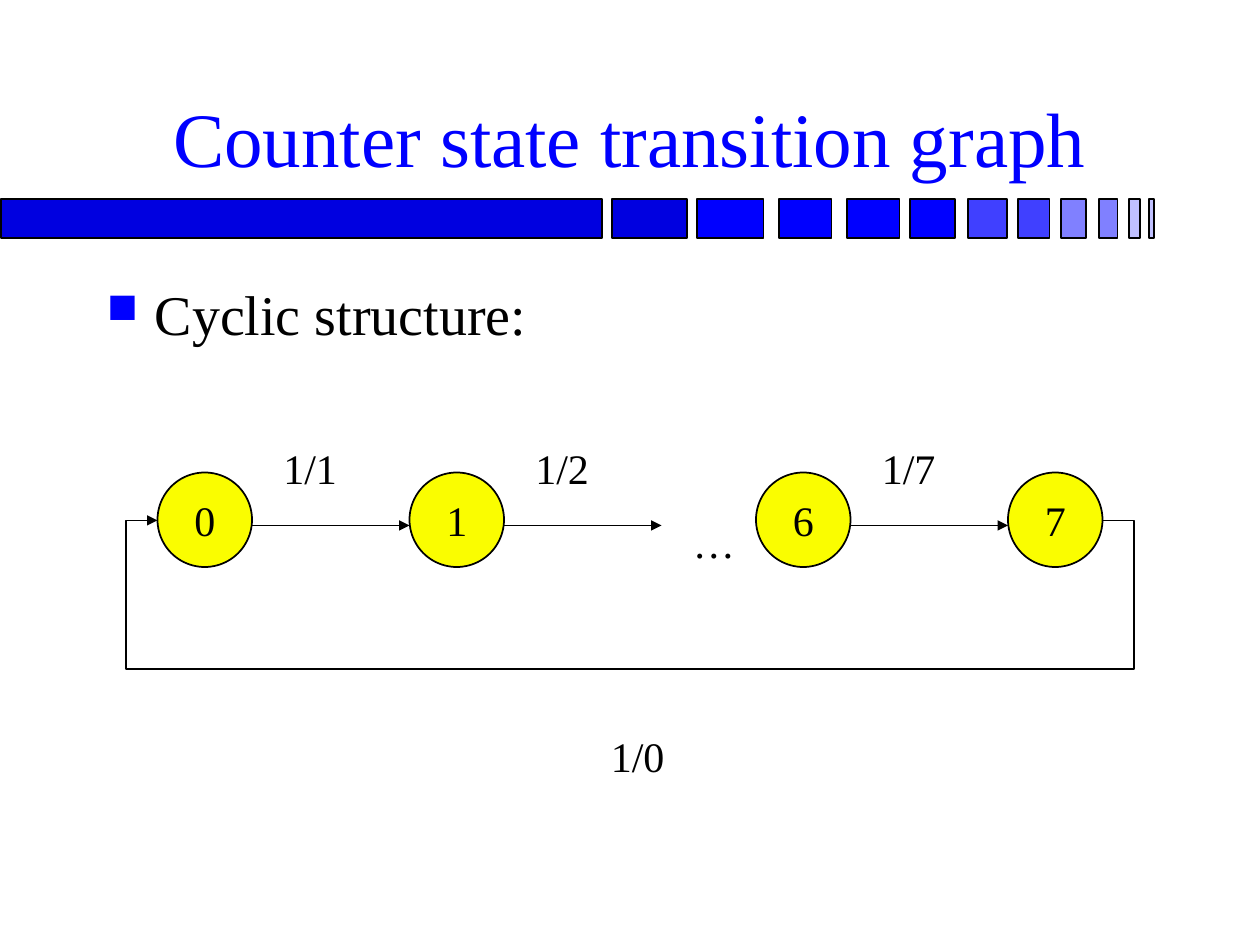
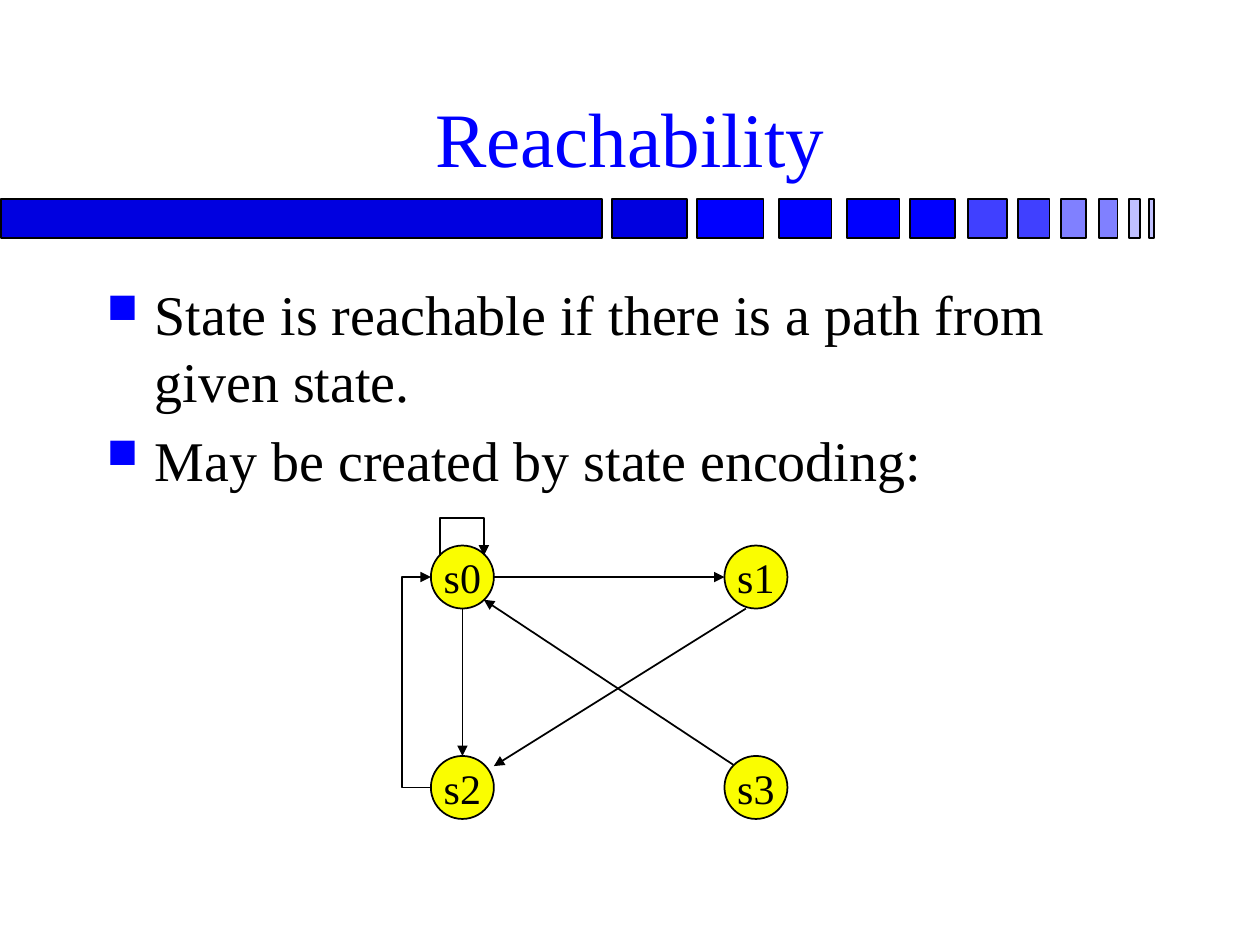
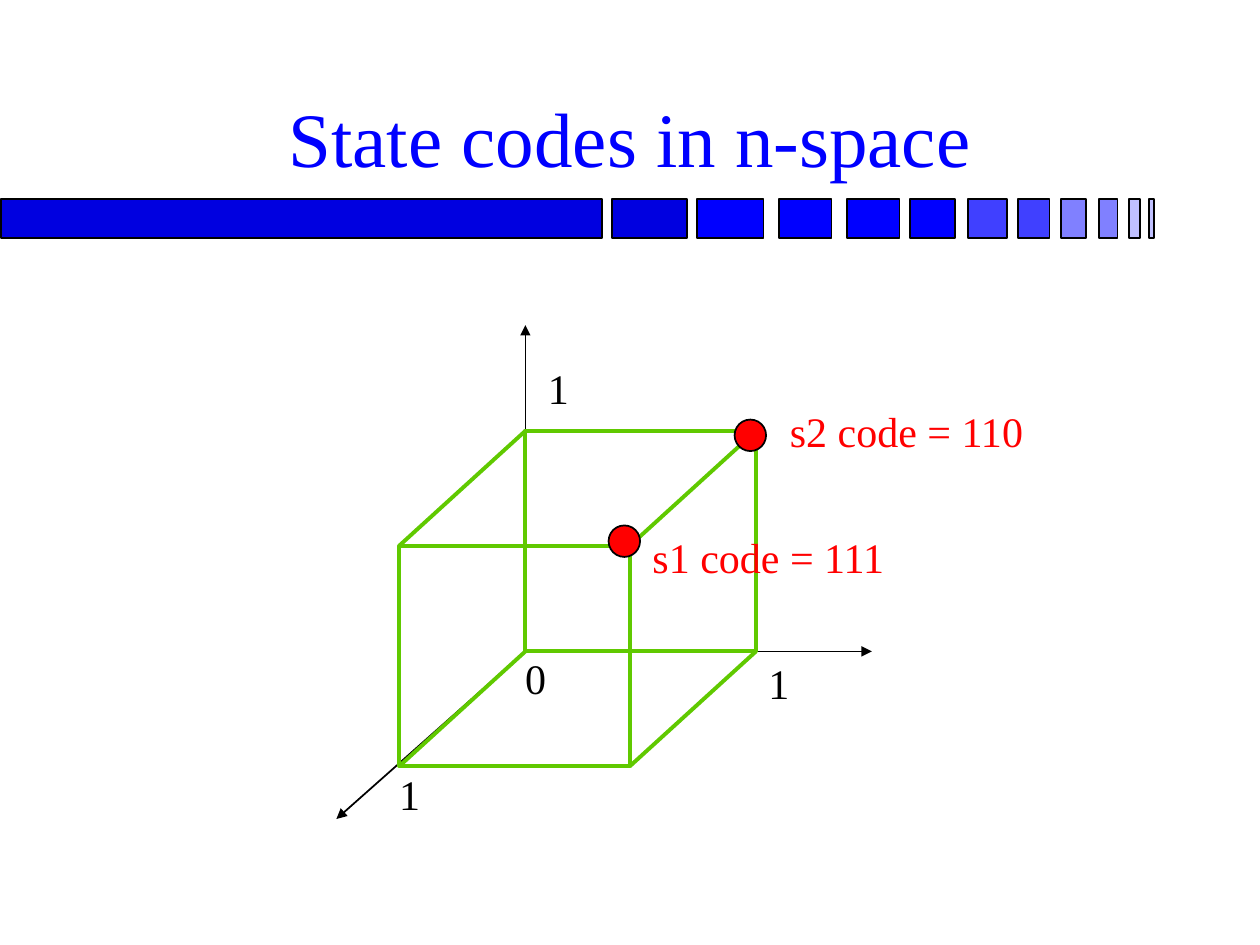
import pptx
import pptx.util
import pptx.dml.color
import pptx.enum.shapes
import pptx.enum.text
from lxml import etree
from pptx.oxml.ns import qn
from pptx.util import Inches

HUES = {
    "ink": "000000", "title": "0000FF", "node": "FAFD00", "edge": "60C900",
    "code": "FF0000", "deep": "0000E0", "full": "0000FF", "mid": "4040FF",
    "light": "8080FF", "pale": "C0C0FF",
}
FONT = "Times New Roman"
# Left, width and colour of each block in the band
BAND = [
    (0.01, 4.77, "deep"), (4.86, 0.59, "deep"), (5.53, 0.53, "full"),
    (6.18, 0.42, "full"), (6.72, 0.42, "full"), (7.22, 0.36, "full"),
    (7.68, 0.31, "mid"), (8.08, 0.25, "mid"), (8.42, 0.2, "light"),
    (8.72, 0.15, "light"), (8.96, 0.09, "pale"), (9.12, 0.04, "pale"),
]
SHAPE = pptx.enum.shapes.MSO_SHAPE
ALIGN = pptx.enum.text.PP_ALIGN
ANCHOR = pptx.enum.text.MSO_ANCHOR


def paint(hue):
    return pptx.dml.color.RGBColor.from_string(HUES[hue])


class Deck:
    def __init__(self):
        self.prs = pptx.Presentation()
        self.prs.slide_width = Inches(10)
        self.prs.slide_height = Inches(7.5)
        self.slide = None

    def start(self, title):
        """Add a slide with the shared band and title."""
        self.slide = self.prs.slides.add_slide(self.prs.slide_layouts[5])
        for left, width, hue in BAND:
            self.shape(SHAPE.RECTANGLE, left, 1.58, width, 0.31, hue)
        head = self.slide.shapes.title
        head.left, head.top = Inches(0.75), Inches(0.21)
        head.width, head.height = Inches(8.5), Inches(1.29)
        frame = head.text_frame
        frame.text = title
        frame.vertical_anchor = ANCHOR.BOTTOM
        self.font(frame.paragraphs[0], 44, "title", ALIGN.CENTER)

    def font(self, para, size, hue="ink", align=ALIGN.LEFT):
        para.alignment = align
        para.font.name = FONT
        para.font.size = pptx.util.Pt(size)
        para.font.color.rgb = paint(hue)

    def stroke(self, item, hue="ink", width=1, arrow=False):
        item.line.color.rgb = paint(hue)
        item.line.width = pptx.util.Pt(width)
        if arrow:
            etree.SubElement(item.line._get_or_add_ln(), qn("a:tailEnd"), type="triangle")

    def shape(self, kind, left, top, width, height, fill=None, line="ink", weight=1):
        item = self.slide.shapes.add_shape(
            kind, Inches(left), Inches(top), Inches(width), Inches(height))
        item.shadow.inherit = False
        if fill:
            item.fill.solid()
            item.fill.fore_color.rgb = paint(fill)
        else:
            item.fill.background()
        self.stroke(item, line, weight)
        return item

    def node(self, left, top, size, text="", fill="node"):
        item = self.shape(SHAPE.OVAL, left, top, size, size, fill)
        if text:
            frame = item.text_frame
            frame.text = text
            frame.word_wrap = False
            frame.vertical_anchor = ANCHOR.MIDDLE
            self.font(frame.paragraphs[0], 24, align=ALIGN.CENTER)

    def line(self, start, end, hue="ink", width=1, arrow=True):
        item = self.slide.shapes.add_connector(
            pptx.enum.shapes.MSO_CONNECTOR.STRAIGHT,
            *(Inches(n) for n in (*start, *end)))
        self.stroke(item, hue, width, arrow)
        etree.SubElement(item.element.spPr, qn("a:effectLst"))

    def route(self, *points):
        """Draw an arrow that runs through the points."""
        first, *rest = [(Inches(x), Inches(y)) for x, y in points]
        pen = self.slide.shapes.build_freeform(*first)
        pen.add_line_segments(rest, close=False)
        item = pen.convert_to_shape()
        item.shadow.inherit = False
        item.fill.background()
        self.stroke(item, arrow=True)

    def box(self, left, top, width, height):
        return self.slide.shapes.add_textbox(
            Inches(left), Inches(top), Inches(width), Inches(height)).text_frame

    def label(self, left, top, width, text, hue="ink"):
        frame = self.box(left, top, width, 0.5)
        frame.word_wrap = False
        frame.text = text
        self.font(frame.paragraphs[0], 24, hue)

    def points(self, height, *texts):
        frame = self.box(0.75, 2.17, 8.5, height)
        frame.word_wrap = True
        frame.text = "\n".join(texts)
        for i, para in enumerate(frame.paragraphs):
            props = para._p.get_or_add_pPr()
            props.set("marL", str(Inches(0.38)))
            props.set("indent", str(-Inches(0.38)))
            tint = etree.SubElement(props, qn("a:buClr"))
            etree.SubElement(tint, qn("a:srgbClr"), val=HUES["title"])
            etree.SubElement(props, qn("a:buSzPct"), val="75000")
            etree.SubElement(props, qn("a:buChar"), char="■")
            para.space_before = pptx.util.Pt(6.4 if i else 0)
            self.font(para, 32)


def count(deck):
    deck.start("Counter state transition graph")
    deck.points(0.75, "Cyclic structure:")
    # States and the arrow that leaves each one
    for left, name, step in [(1.25, "0", "1/1"), (3.25, "1", "1/2"),
                             (6, "6", "1/7"), (8, "7", None)]:
        deck.node(left, 3.75, 0.75, name)
        if step:
            deck.line((left + 0.75, 4.17), (left + 2, 4.17))
            deck.label(left + 0.9, 3.46, 0.63, step)
    # Way back to the first state
    deck.route((8.75, 4.13), (9, 4.13), (9, 5.31), (1, 5.31), (1, 4.13), (1.25, 4.13))
    deck.label(4.75, 5.75, 0.63, "1/0")
    deck.label(5.4, 4.05, 0.53, "…")


def reach(deck):
    deck.start("Reachability")
    deck.points(2, "State is reachable if there is a path from given state.",
                "May be created by state encoding:")
    # States on a two by two grid
    for i in range(4):
        deck.node((3.42, 5.75)[i % 2], (4.33, 6)[i // 2], 0.5, f"s{i}")
    # Transitions
    for start, end in [((3.92, 4.58), (5.75, 4.58)), ((3.67, 4.83), (3.67, 6)),
                       ((5.92, 4.83), (3.92, 6.08)), ((5.82, 6.07), (3.84, 4.76))]:
        deck.line(start, end)
    deck.route((3.42, 6.25), (3.19, 6.25), (3.19, 4.58), (3.42, 4.58))
    deck.route((3.49, 4.41), (3.49, 4.11), (3.84, 4.11), (3.84, 4.41))


def space(deck):
    deck.start("State codes in n-space")
    # Axes
    for end in [(6.92, 5.17), (2.67, 6.5), (4.17, 2.58)]:
        deck.line((4.17, 5.17), end)
    # Cube: back and front faces, then the edges between them
    wide, high = 1.83, 1.75
    back, front = (4.17, 3.42), (3.17, 4.33)
    for face in (back, front):
        deck.shape(SHAPE.RECTANGLE, *face, wide, high, line="edge", weight=2.25)
    for dy in (0, high):
        for dx in (0, wide):
            deck.line((front[0] + dx, front[1] + dy), (back[0] + dx, back[1] + dy),
                      "edge", 2.25, arrow=False)
    # State codes
    deck.node(4.83, 4.17, 0.25, fill="code")
    deck.label(5.08, 4.17, 2.06, "s1 code = 111", "code")
    deck.node(5.83, 3.33, 0.25, fill="code")
    deck.label(6.17, 3.17, 2.06, "s2 code = 110", "code")
    # Axis marks
    for left, top, mark in [(4.07, 5.13, "0"), (3.07, 6.05, "1"),
                            (6, 5.17, "1"), (4.25, 2.83, "1")]:
        deck.label(left, top, 0.37, mark)


def main():
    deck = Deck()
    for build in (count, reach, space):
        build(deck)
    deck.prs.save("out.pptx")


if __name__ == "__main__":
    main()
